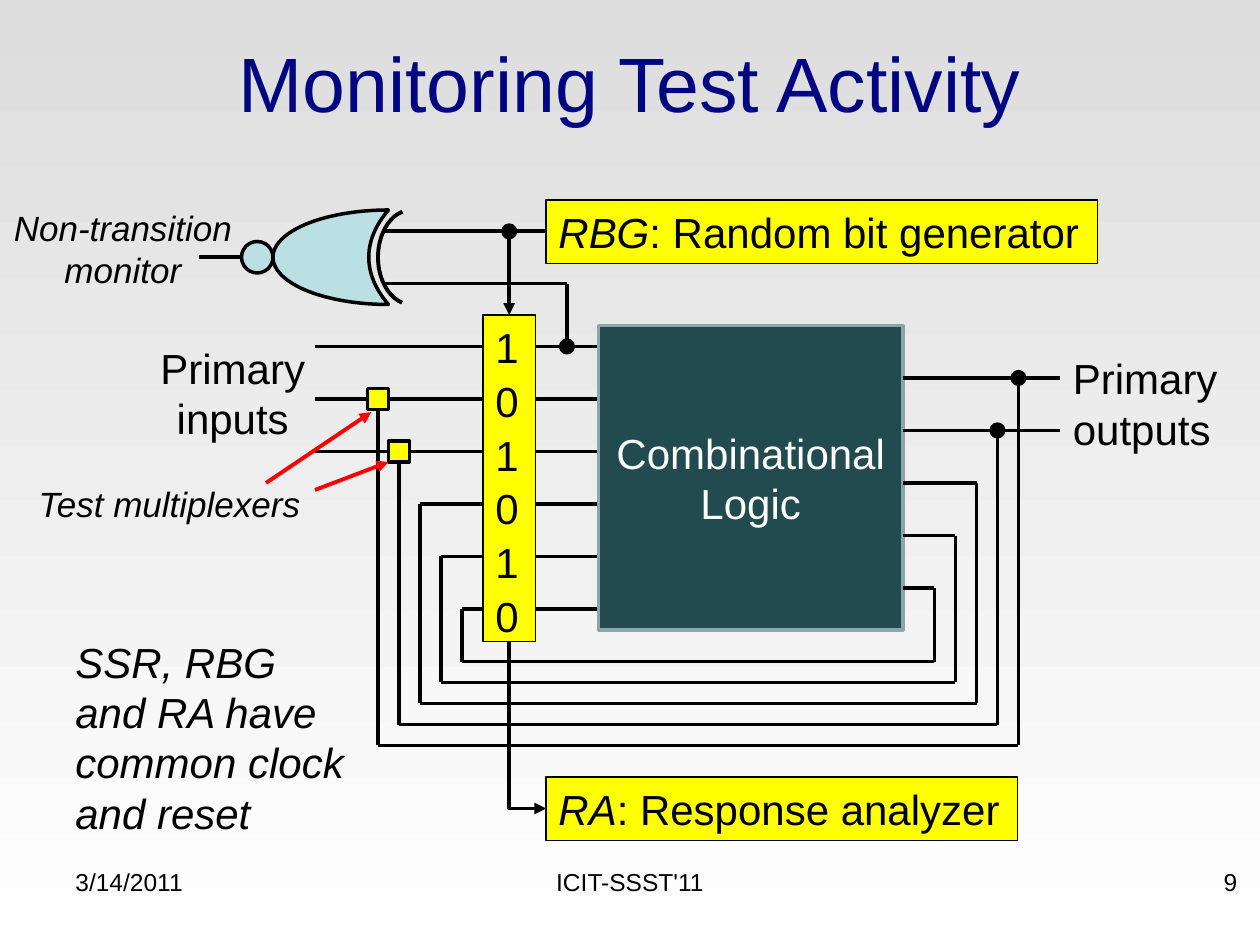
from lxml import etree
from pptx import Presentation
from pptx.dml.color import RGBColor
from pptx.enum.shapes import MSO_CONNECTOR as CONN, MSO_SHAPE as SHAPE
from pptx.enum.text import MSO_ANCHOR as ANCHOR, PP_ALIGN as ALIGN
from pptx.oxml.ns import qn
from pptx.util import Pt

BLACK = RGBColor(0, 0, 0)
WHITE = RGBColor(255, 255, 255)
GREY = RGBColor(0xDD, 0xDD, 0xDD)
NAVY = RGBColor(0x00, 0x06, 0x81)
YELLOW = RGBColor(0xFF, 0xFF, 0x00)
RED = RGBColor(0xFF, 0x00, 0x00)
TEAL = RGBColor(0x22, 0x4B, 0x50)
TEAL_EDGE = RGBColor(0x8A, 0xA6, 0xA8)
PALE = RGBColor(0xBB, 0xE0, 0xE3)

ROW = 30
TRACK = 12
MUX = 12
DOT = 7.2


def write(sp, paragraphs, size=24, color=BLACK, italic=False, align=ALIGN.LEFT,
          anchor=ANCHOR.TOP, wrap=True, after=0):
    tf = sp.text_frame
    tf.word_wrap = wrap
    tf.vertical_anchor = anchor
    for i, runs in enumerate(paragraphs):
        p = tf.paragraphs[0] if i == 0 else tf.add_paragraph()
        p.alignment = align
        p.space_after = Pt(after)
        for text, slanted in [(runs, italic)] if isinstance(runs, str) else runs:
            r = p.add_run()
            r.text = text
            fmt = {"name": "Arial", "size": Pt(size), "italic": slanted}
            for key, value in fmt.items():
                setattr(r.font, key, value)
            r.font.color.rgb = color


def add_label(s, box, paragraphs, **fmt):
    sp = s.shapes.add_textbox(*map(Pt, box))
    write(sp, paragraphs, **fmt)


def add_box(s, kind, box, fill, line=BLACK, width=2):
    sp = s.shapes.add_shape(kind, *map(Pt, box))
    sp.shadow.inherit = False
    if fill is None:
        sp.fill.background()
    else:
        sp.fill.solid()
        sp.fill.fore_color.rgb = fill
    sp.line.color.rgb = line
    sp.line.width = Pt(width)
    return sp


def add_wire(s, x1, y1, x2, y2, color=BLACK, arrow=False, kind=CONN.STRAIGHT):
    c = s.shapes.add_connector(kind, Pt(x1), Pt(y1), Pt(x2), Pt(y2))
    c.line.color.rgb = color
    c.line.width = Pt(2.25)
    if arrow:
        etree.SubElement(c.line._get_or_add_ln(), qn("a:tailEnd"), type="triangle")
    etree.SubElement(c._element.spPr, qn("a:effectLst"))
    return c


def add_bend(s, start, start_site, end, end_site, box, turn=0):
    c = add_wire(s, 0, 0, 0, 0, arrow=True, kind=CONN.ELBOW)
    c.begin_connect(start, start_site)
    c.end_connect(end, end_site)
    for key, value in zip(("left", "top", "width", "height"), box):
        setattr(c, key, Pt(value))
    xfrm = c._element.spPr.find(qn("a:xfrm"))
    for key in ("flipH", "flipV", "rot"):
        xfrm.attrib.pop(key, None)
    xfrm.set("flipH", "1")
    if turn:
        xfrm.set("rot", str(turn * 60000))
    c._element.spPr.find(qn("a:prstGeom")).set("prst", "bentConnector2")


def add_dot(s, x, y):
    add_box(s, SHAPE.OVAL, (x - DOT / 2, y - DOT / 2, DOT, DOT), BLACK)


def add_footer(s, x, y, w, h):
    parts = [(0, 168, "3/14/2011", ALIGN.LEFT), (210, 228, "ICIT-SSST'11", ALIGN.CENTER),
             (w - 168, 168, "9", ALIGN.RIGHT)]
    for dx, width, text, align in parts:
        add_label(s, (x + dx, y, width, h), [text], size=14, align=align)


def add_register(s, x, y, w, h):
    sp = add_box(s, SHAPE.RECTANGLE, (x, y, w, h), YELLOW, width=0.75)
    write(sp, "101010", after=2)
    for i in range(6):
        row = y + 18 + ROW * i
        add_wire(s, x + w, row, x + w + 36, row)
        if i < 3:
            add_wire(s, x - 96, row, x, row)
    return sp


def add_logic(s, x, y, w, h):
    sp = add_box(s, SHAPE.RECTANGLE, (x, y, w, h), TEAL, TEAL_EDGE)
    write(sp, ["Combinational Logic"], color=WHITE, align=ALIGN.CENTER, anchor=ANCHOR.MIDDLE)


def add_feedback(s, x, y, w, h, register_x, logic_x):
    for i in range(5):
        left, right, bottom = x + TRACK * i, x + w - TRACK * i, y + h - TRACK * i
        out_row = y + ROW * i
        in_row = out_row + 12
        add_wire(s, left, in_row, left, bottom)
        add_wire(s, left, bottom, right, bottom)
        add_wire(s, right, out_row, right, bottom)
        if i < 2:
            add_wire(s, logic_x, out_row, x + w + 24, out_row)
            add_dot(s, right, out_row)
            add_box(s, SHAPE.RECTANGLE, (left - MUX / 2, in_row - MUX / 2, MUX, MUX), YELLOW)
        else:
            add_wire(s, logic_x, out_row, right, out_row)
            add_wire(s, left, in_row, register_x, in_row)


def add_block(s, box, name, meaning):
    sp = add_box(s, SHAPE.RECTANGLE, box, YELLOW, width=0.75)
    write(sp, [[(name, True), (": " + meaning, False)]], wrap=False)
    return sp


def add_gate(s, x, y, w, h):
    mid = y + h / 2
    top, low = y + 12.25, y + 42
    add_wire(s, x + 177, top, x + 106, top)
    add_wire(s, x + 210, low, x + 106, low)
    add_wire(s, x + 210, low, x + 210, low + 36)
    add_dot(s, x + 177, top)
    add_dot(s, x + 210, low + 36)
    body = add_box(s, SHAPE.MOON, (x + 42, y, 66, h), PALE)
    body.adjustments[0] = 0.83
    add_box(s, SHAPE.OVAL, (x + 24, mid - 9, 18, 18), PALE)
    arc = add_box(s, SHAPE.ARC, (x + 102, y, w - 102, h), None, width=2.25)
    arc.adjustments[0] = 168.6
    arc.adjustments[1] = 47.18
    arc._element.spPr.find(qn("a:xfrm")).set("flipH", "1")
    add_wire(s, x, mid, x + 24, mid)


def add_labels(s, x, y):
    center = ALIGN.CENTER
    labels = [
        ((606, 198, 98, 65.5), ["Primary", "outputs"], {}),
        ((84, 192, 98, 65.5), ["Primary", "inputs"], {"align": center}),
        ((0, 114.5, 140.5, 55.5), ["Non-transition", "monitor"],
         {"align": center, "size": 20, "italic": True}),
        ((36, 360, 169, 124), ["SSR, RBG", "and RA have", "common clock", "and reset"],
         {"italic": True}),
        ((15, 272, 165, 31.5), ["Test multiplexers"], {"size": 20, "italic": True}),
    ]
    for (dx, dy, w, h), lines, fmt in labels:
        add_label(s, (x + dx, y + dy, w, h), lines, wrap=False, **fmt)
    for x1, y1, x2, y2 in [(152, 276, 212.25, 235.5), (180, 280, 222, 264)]:
        add_wire(s, x + x1, y + y1, x + x2, y + y2, RED, arrow=True)


def main():
    prs = Presentation()
    prs.slide_width, prs.slide_height = Pt(720), Pt(540)
    s = prs.slides.add_slide(prs.slide_layouts[6])
    fill = s.background.fill
    fill.gradient()
    fill.gradient_angle = 270
    for stop, color in zip(fill.gradient_stops, (GREY, WHITE)):
        stop.color.rgb = color
    add_label(s, (36, 21.6, 648, 50.4), ["Monitoring Test Activity"], size=44, color=NAVY,
              align=ALIGN.CENTER, anchor=ANCHOR.MIDDLE)
    add_footer(s, 36, 492, 678, 37.5)
    register = add_register(s, 276, 180, 30, 186.5)
    add_logic(s, 342, 186, 174, 174)
    add_feedback(s, 216, 216, 366, 210, 276, 516)
    analyzer = add_block(s, (312, 444, 269.5, 36.25), "RA", "Response analyzer")
    generator = add_block(s, (312, 114.25, 315, 36.25), "RBG", "Random bit generator")
    add_bend(s, register, 2, analyzer, 1, (253.75, 403.75, 95.5, 21), turn=270)
    add_bend(s, generator, 1, register, 0, (291, 132.25, 21, 47.75))
    add_gate(s, 114, 120, 140, 54)
    add_labels(s, 0, 0)
    prs.save("out.pptx")


if __name__ == "__main__":
    main()
